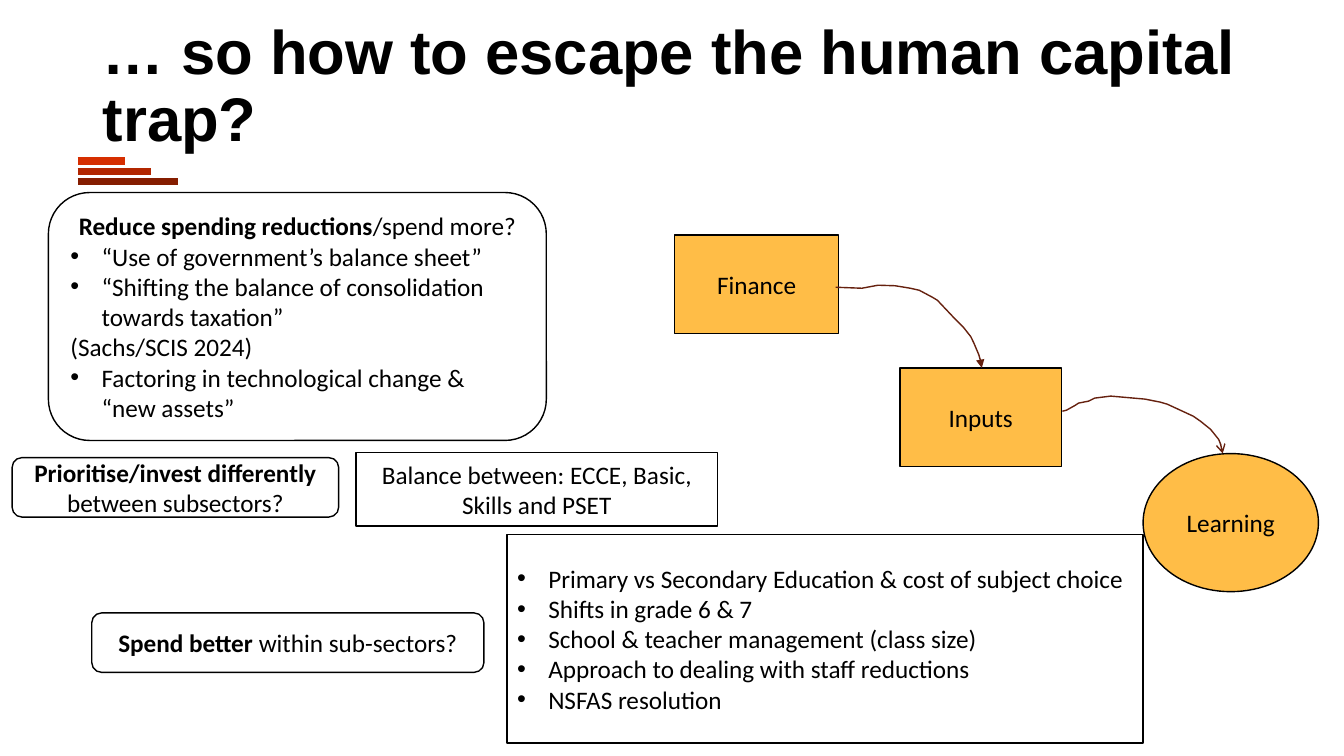
import pptx
import pptx.dml.color
import pptx.enum.shapes
import pptx.enum.text
import pptx.oxml
import pptx.oxml.ns
import pptx.util

RGBColor = pptx.dml.color.RGBColor
SHAPE = pptx.enum.shapes.MSO_SHAPE
ALIGN = pptx.enum.text.PP_ALIGN

BLACK = RGBColor(0x00, 0x00, 0x00)
WHITE = RGBColor(0xFF, 0xFF, 0xFF)
AMBER = RGBColor(0xFF, 0xBD, 0x47)
BROWN = RGBColor(0x66, 0x21, 0x0F)
DARK_RED = RGBColor(0x85, 0x1D, 0x00)
MID_RED = RGBColor(0xB2, 0x26, 0x00)
BRIGHT_RED = RGBColor(0xD6, 0x2E, 0x00)

WIDTH = pptx.util.Inches(13.333)
HEIGHT = pptx.util.Inches(7.5)
BULLET_INDENT = pptx.util.Inches(0.31)

BODY_FONT = {"name": "Calibri", "size": pptx.util.Pt(18)}
TITLE_FONT = {"name": "Arial", "size": pptx.util.Pt(44)}

# Arrow routes, as percentages of slide width and height
FINANCE_TO_INPUTS = [
    (62.18, 38), (64.13, 38.13), (65.33, 37.73), (66.6, 37.8), (67.73, 38.13),
    (68.4, 38.4), (69.38, 39.33), (69.75, 39.73), (71.1, 42.27), (71.7, 43.33),
    (72.23, 44.53), (72.45, 45.33), (72.83, 46.93), (72.98, 47.87), (73.05, 48.67),
]
INPUTS_TO_LEARNING = [
    (79.05, 54.4), (79.35, 54.27), (80.03, 53.6), (80.25, 53.33), (81, 53.07),
    (81.45, 52.67), (82.65, 52.4), (85.2, 52.8), (86.33, 53.2), (86.85, 53.47),
    (87.83, 54.27), (88.8, 55.07), (89.33, 55.73), (90.08, 56.8), (90.68, 58.13),
    (90.83, 58.8), (90.98, 60),
]


def across(percent):
    return round(WIDTH * percent / 100)


def down(percent):
    return round(HEIGHT * percent / 100)


def place(left, top, width, height):
    return across(left), down(top), across(width), down(height)


def add_child(parent, tag, **attributes):
    child = pptx.oxml.parse_xml(f"<a:{tag} {pptx.oxml.ns.nsdecls('a')}/>")
    for name, value in attributes.items():
        child.set(name, str(value))
    parent.append(child)


def style_line(line, color, width):
    line.color.rgb = color
    line.width = pptx.util.Pt(width)


def bullet_paragraph(paragraph):
    properties = paragraph._p.get_or_add_pPr()
    properties.set("marL", str(BULLET_INDENT))
    properties.set("indent", str(-BULLET_INDENT))
    add_child(properties, "buFont", typeface="Arial")
    add_child(properties, "buChar", char="•")


def write(shape, lines, font_format):
    """Each line is (kind, bold text, plain text)."""
    frame = shape.text_frame
    frame.word_wrap = True
    frame.vertical_anchor = pptx.enum.text.MSO_ANCHOR.MIDDLE
    for index, (kind, bold_text, plain_text) in enumerate(lines):
        paragraph = frame.add_paragraph() if index else frame.paragraphs[0]
        paragraph.alignment = ALIGN.CENTER if kind == "center" else ALIGN.LEFT
        if kind == "bullet":
            bullet_paragraph(paragraph)
        for text, bold in ((bold_text, True), (plain_text, False)):
            if text:
                run = paragraph.add_run()
                run.text = text
                for name, value in {**font_format, "bold": bold}.items():
                    setattr(run.font, name, value)
                run.font.color.rgb = BLACK


def add_title(slide, text):
    box = slide.shapes.add_textbox(*place(6.9, 2, 86.25, 19.33))
    write(box, [("left", text, "")], TITLE_FONT)
    box.text_frame.paragraphs[0].line_spacing = 0.9


def add_box(slide, preset, bounds, fill, lines):
    shape = slide.shapes.add_shape(preset, *place(*bounds))
    shape.shadow.inherit = False
    shape.fill.solid()
    shape.fill.fore_color.rgb = fill
    style_line(shape.line, BLACK, 1)
    write(shape, lines, BODY_FONT)


def add_bar(slide, top, right, color):
    bar = slide.shapes.add_connector(
        pptx.enum.shapes.MSO_CONNECTOR.STRAIGHT,
        across(5.78), down(top), across(right), down(top))
    style_line(bar.line, color, 5.5)
    add_child(bar._element.spPr, "effectLst")


def add_curved_arrow(slide, route, head):
    points = [(across(x), down(y)) for x, y in route]
    builder = slide.shapes.build_freeform(*points[0])
    builder.add_line_segments(points[1:], close=False)
    arrow = builder.convert_to_shape()
    arrow.shadow.inherit = False
    arrow.fill.background()
    style_line(arrow.line, BROWN, 1)
    outline = arrow._element.spPr.find(pptx.oxml.ns.qn("a:ln"))
    add_child(outline, "tailEnd", type=head)


def main():
    presentation = pptx.Presentation()
    presentation.slide_width = WIDTH
    presentation.slide_height = HEIGHT
    slide = presentation.slides.add_slide(presentation.slide_layouts[6])

    # Heading with its stepped bars
    for top, right, color in ((24, 13.28, DARK_RED), (22.67, 11.25, MID_RED),
                              (21.33, 9.3, BRIGHT_RED)):
        add_bar(slide, top, right, color)
    add_title(slide, "… so how to escape the human capital trap?")

    # Chain from finance to learning
    for preset, bounds, label in (
        (SHAPE.FLOWCHART_CONNECTOR, (85.05, 60, 13.05, 18.27), "Learning"),
        (SHAPE.RECTANGLE, (50.18, 31.07, 12.23, 13.07), "Finance"),
        (SHAPE.RECTANGLE, (66.98, 48.67, 12, 13.07), "Inputs"),
    ):
        add_box(slide, preset, bounds, AMBER, [("center", "", label)])
    add_curved_arrow(slide, FINANCE_TO_INPUTS, "triangle")
    add_curved_arrow(slide, INPUTS_TO_LEARNING, "arrow")

    # Policy questions
    add_box(slide, SHAPE.ROUNDED_RECTANGLE, (3.6, 25.47, 37.05, 32.8), WHITE, [
        ("center", "Reduce spending reductions", "/spend more?"),
        ("bullet", "", "“Use of government’s balance sheet”"),
        ("bullet", "", "“Shifting the balance of consolidation towards taxation”"),
        ("left", "", "(Sachs/SCIS 2024)"),
        ("bullet", "", "Factoring in technological change & “new assets”"),
    ])
    add_box(slide, SHAPE.ROUNDED_RECTANGLE, (0.9, 60.53, 24.3, 7.87), WHITE,
            [("center", "Prioritise/invest differently ", "between subsectors?")])
    add_box(slide, SHAPE.ROUNDED_RECTANGLE, (6.83, 81.07, 29.18, 7.87), WHITE,
            [("center", "Spend better ", "within sub-sectors?")])

    # Details beside the questions
    add_box(slide, SHAPE.RECTANGLE, (26.48, 59.87, 26.93, 9.73), WHITE,
            [("center", "", "Balance between: ECCE, Basic, Skills and PSET")])
    add_box(slide, SHAPE.RECTANGLE, (37.73, 70.67, 47.33, 27.6), WHITE, [
        ("bullet", "", text) for text in (
            "Primary vs Secondary Education & cost of subject choice",
            "Shifts in grade 6 & 7",
            "School & teacher management (class size)",
            "Approach to dealing with staff reductions",
            "NSFAS resolution",
        )
    ])

    presentation.save("out.pptx")


if __name__ == "__main__":
    main()
